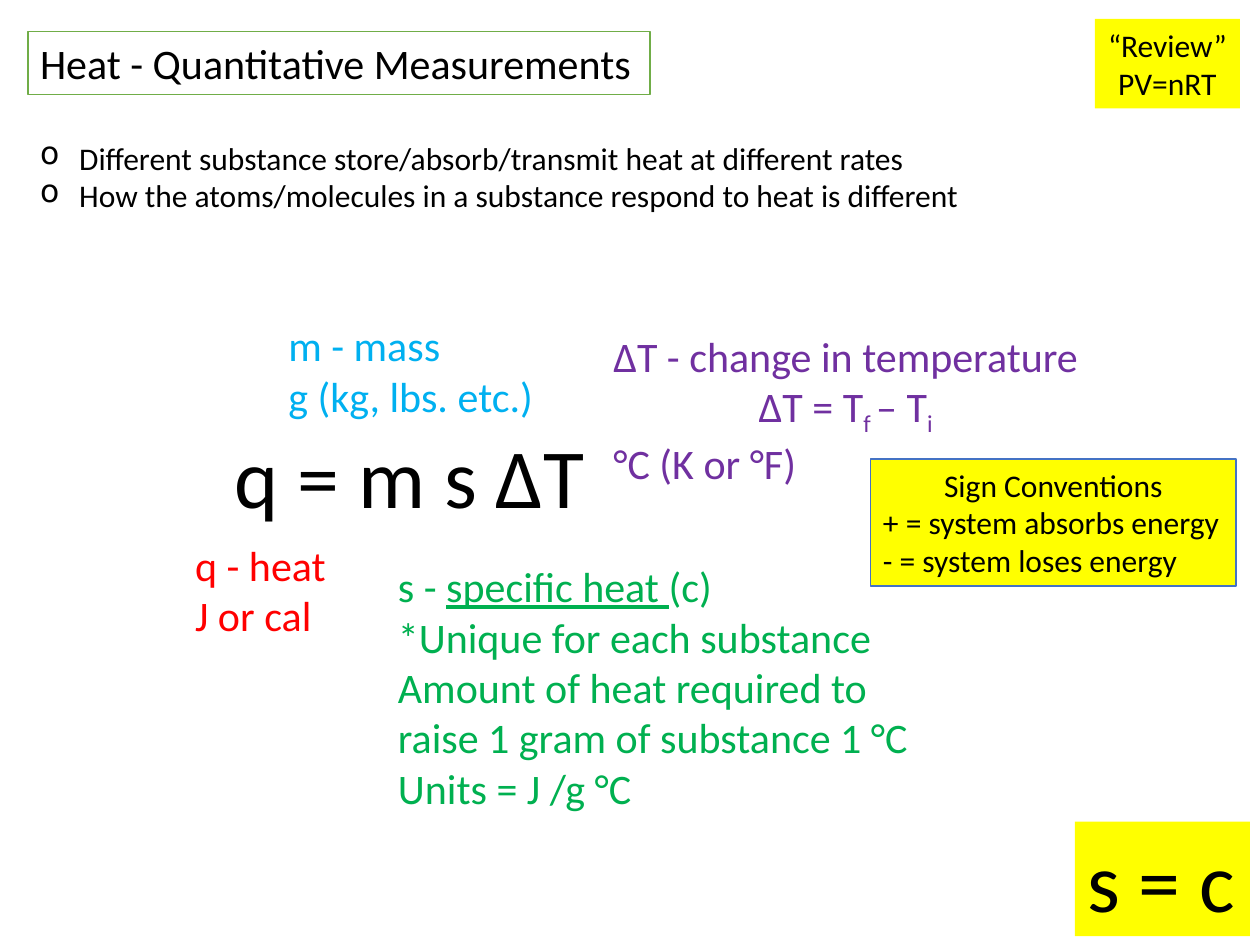
from dataclasses import dataclass
from typing import Optional

from lxml import etree
from pptx import Presentation
from pptx.dml.color import RGBColor
from pptx.enum.shapes import MSO_SHAPE
from pptx.enum.text import MSO_AUTO_SIZE, PP_ALIGN
from pptx.oxml.ns import qn
from pptx.util import Inches, Pt

BLACK = RGBColor(0x00, 0x00, 0x00)
WHITE = RGBColor(0xFF, 0xFF, 0xFF)
YELLOW = RGBColor(0xFF, 0xFF, 0x00)
GREEN_LINE = RGBColor(0x70, 0xAD, 0x47)
BLUE_LINE = RGBColor(0x44, 0x72, 0xC4)
RED = RGBColor(0xFF, 0x00, 0x00)
SKY = RGBColor(0x00, 0xB0, 0xF0)
PURPLE = RGBColor(0x70, 0x30, 0xA0)
GREEN = RGBColor(0x00, 0xB0, 0x50)

FONT = "Calibri"
BULLET_INDENT = Inches(0.31)


@dataclass
class Run:
    text: str
    underline: bool = False
    subscript: bool = False


@dataclass
class Line:
    runs: list[Run]
    centred: bool = False
    bullet: Optional[str] = None


@dataclass
class Note:
    left: float
    top: float
    width: float
    height: float
    size: int
    lines: list[Line]
    color: RGBColor = BLACK
    fill: Optional[RGBColor] = None
    border: Optional[RGBColor] = None


def line(text: str, centred: bool = False, bullet: Optional[str] = None) -> Line:
    return Line([Run(text)], centred, bullet)


def add_bullet(paragraph, char: str) -> None:
    properties = paragraph._p.get_or_add_pPr()
    properties.set("marL", str(BULLET_INDENT))
    properties.set("indent", str(-BULLET_INDENT))
    etree.SubElement(properties, qn("a:buChar")).set("char", char)


def add_run(paragraph, part: Run, note: Note) -> None:
    run = paragraph.add_run()
    run.text = part.text
    run.font.name = FONT
    run.font.size = Pt(note.size)
    run.font.color.rgb = note.color
    if part.underline:
        run.font.underline = True
    if part.subscript:
        run.font._element.set("baseline", "-25000")


def draw_note(slide, note: Note) -> None:
    bounds = [Inches(v) for v in (note.left, note.top, note.width, note.height)]
    if note.fill is None:
        box = slide.shapes.add_textbox(*bounds)
    else:
        box = slide.shapes.add_shape(MSO_SHAPE.RECTANGLE, *bounds)
        box.shadow.inherit = False
        box.fill.solid()
        box.fill.fore_color.rgb = note.fill
        if note.border is None:
            box.line.fill.background()
        else:
            box.line.color.rgb = note.border
            box.line.width = Pt(1)

    frame = box.text_frame
    frame.word_wrap = False
    frame.auto_size = MSO_AUTO_SIZE.SHAPE_TO_FIT_TEXT
    for index, content in enumerate(note.lines):
        paragraph = frame.add_paragraph() if index else frame.paragraphs[0]
        paragraph.alignment = PP_ALIGN.CENTER if content.centred else PP_ALIGN.LEFT
        if content.bullet:
            add_bullet(paragraph, content.bullet)
        for part in content.runs:
            add_run(paragraph, part, note)


# Heading and introduction
title = Note(0.22, 0.25, 4.94, 0.5, 24, [line("Heat - Quantitative Measurements")],
             fill=WHITE, border=GREEN_LINE)
introduction = Note(0.22, 1.05, 7.59, 0.71, 18, [
    line("Different substance store/absorb/transmit heat at different rates", bullet="o"),
    line("How the atoms/molecules in a substance respond to heat is different", bullet="o"),
])

# Equation and the meaning of each symbol
equation = Note(1.76, 3.32, 3.01, 0.91, 48, [line("q = m s ΔT")])
heat = Note(1.45, 4.23, 1.25, 0.91, 24, [line("q - heat"), line("J or cal")], RED)
mass = Note(2.19, 2.49, 2.16, 0.91, 24, [line("m - mass"), line("g (kg, lbs. etc.)")], SKY)
temperature_change = Note(4.77, 2.57, 3.93, 1.31, 24, [
    line("ΔT - change in temperature"),
    Line([Run("ΔT = T"), Run("f ", subscript=True), Run("– T"), Run("i", subscript=True)],
         centred=True),
    line("°C (K or °F)"),
], PURPLE)
specific_heat = Note(3.06, 4.4, 4.28, 2.12, 24, [
    Line([Run("s - "), Run("specific heat ", underline=True), Run("(c)")]),
    line("*Unique for each substance"),
    line("Amount of heat required to"),
    line("raise 1 gram of substance 1 °C"),
    line("Units = J /g °C"),
], GREEN)

# Highlighted reminders
sign_conventions = Note(6.91, 3.64, 2.9, 1.01, 18, [
    line("Sign Conventions", centred=True),
    line("+ = system absorbs energy"),
    line("- = system loses energy"),
], fill=YELLOW, border=BLUE_LINE)
same_symbol = Note(8.53, 6.52, 1.39, 0.91, 48, [line("s = c")], fill=YELLOW)
review = Note(8.69, 0.15, 1.15, 0.71, 18,
              [line("“Review”", centred=True), line("PV=nRT", centred=True)], fill=YELLOW)


def main() -> None:
    deck = Presentation()
    deck.slide_width, deck.slide_height = Inches(10), Inches(7.5)
    slide = deck.slides.add_slide(deck.slide_layouts[6])
    for note in (title, introduction, equation, heat, mass, temperature_change,
                 specific_heat, sign_conventions, same_symbol, review):
        draw_note(slide, note)
    deck.save("out.pptx")


if __name__ == "__main__":
    main()
